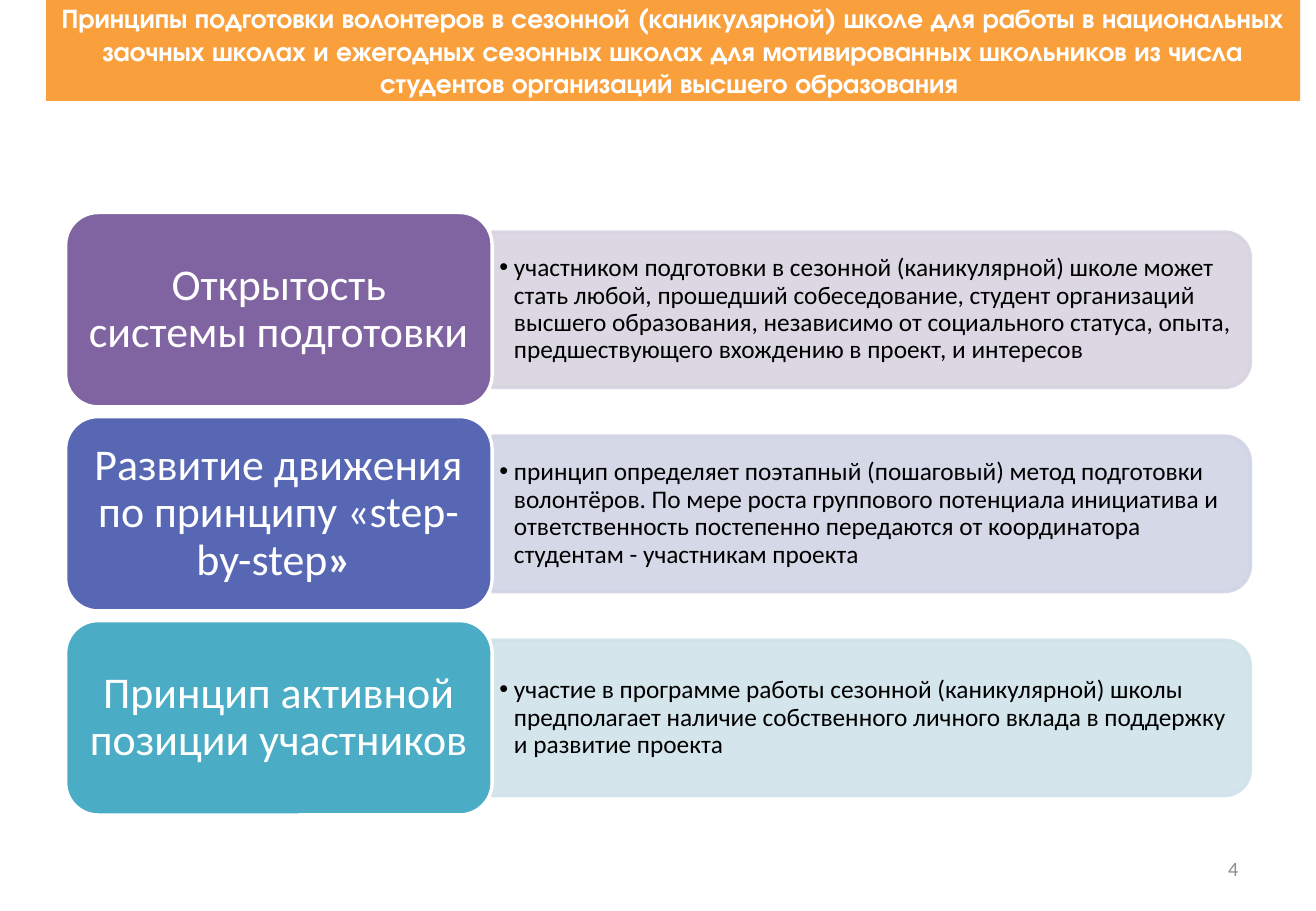
"""Builds a slide with three principles of volunteer training."""
from dataclasses import dataclass

from lxml.etree import SubElement
from pptx import Presentation
from pptx.dml.color import RGBColor
from pptx.enum.shapes import MSO_SHAPE as Shape
from pptx.enum.text import MSO_ANCHOR as Anchor, MSO_AUTO_SIZE as AutoSize, PP_ALIGN as Align
from pptx.oxml.ns import qn
from pptx.util import Inches, Pt


@dataclass(frozen=True)
class Theme:
    heading_font: str = "TeX Gyre Adventor"
    body_font: str = "Calibri"
    banner: str = "F99F3C"
    white: str = "FFFFFF"
    black: str = "000000"
    gray: str = "8C8C8C"
    title_size: int = 16
    label_size: int = 26
    list_size: int = 15
    number_size: int = 12
    outline: int = 2
    panel_alpha: int = 90


TITLE = (
    "Принципы подготовки волонтеров в сезонной (каникулярной) школе для работы в национальных "
    "заочных школах и ежегодных сезонных школах для мотивированных школьников из числа "
    "студентов организаций высшего образования "
)
PRINCIPLES = [
    ("8064A2", "D8D3E0", [("Открытость системы подготовки ", False)],
     "участником подготовки в сезонной (каникулярной) школе может стать любой, прошедший "
     "собеседование, студент организаций высшего образования, независимо от социального "
     "статуса, опыта, предшествующего вхождению в проект, и интересов"),
    ("5767B4", "D1D4E5", [("Развитие движения по принципу «step-by-step", False), ("» ", True)],
     "принцип определяет поэтапный (пошаговый) метод подготовки волонтёров. По мере роста "
     "группового потенциала инициатива и ответственность постепенно передаются от "
     "координатора студентам - участникам проекта"),
    ("4BACC6", "D0E3EA", [("Принцип активной позиции участников ", False)],
     "участие в программе работы сезонной (каникулярной) школы предполагает наличие "
     "собственного личного вклада в поддержку и развитие проекта"),
]
LABEL_LEFT, LABEL_TOP, LABEL_WIDTH, LABEL_HEIGHT = 0.54, 1.75, 3.51, 1.6
ROW_STEP = 1.68
PANEL_LENGTH, PANEL_DEPTH = 6.24, 1.28
LIST_WIDTH, LIST_HEIGHT = 6.18, 1.15


class SlideBuilder:
    """Holds the theme and the current slide."""

    def __init__(self, slide, theme):
        self.slide = slide
        self.theme = theme

    def place(self, box, left, top, width, height):
        """Move and size a box."""
        position = {"left": left, "top": top, "width": width, "height": height}
        for name, value in position.items():
            setattr(box, name, Inches(value))

    def fill_text(self, box, runs, size, color, font, align, insets=(0.1, 0.05), spacing=1.0):
        """Fill a box with one formatted paragraph."""
        frame = box.text_frame
        across, down = map(Inches, insets)
        frame_format = {
            "word_wrap": True, "auto_size": AutoSize.NONE, "vertical_anchor": Anchor.MIDDLE,
            "margin_left": across, "margin_right": across,
            "margin_top": down, "margin_bottom": down,
        }
        for name, value in frame_format.items():
            setattr(frame, name, value)
        para = frame.paragraphs[0]
        para_format = {"alignment": align, "line_spacing": spacing,
                       "space_before": Pt(0), "space_after": Pt(0)}
        for name, value in para_format.items():
            setattr(para, name, value)
        for text, bold in runs:
            span = para.add_run()
            span.text = text
            span_format = {"name": font, "size": Pt(size), "bold": bold}
            for name, value in span_format.items():
                setattr(span.font, name, value)
            span.font.color.rgb = RGBColor.from_string(color)

    def shape(self, kind, bounds, fill, line):
        """Add a filled and outlined preset shape."""
        box = self.slide.shapes.add_shape(kind, *map(Inches, bounds))
        box.shadow.inherit = False
        box.fill.solid()
        box.fill.fore_color.rgb = RGBColor.from_string(fill)
        box.line.color.rgb = RGBColor.from_string(line)
        box.line.width = Pt(self.theme.outline)
        return box

    def title(self, text):
        """Set the banner title."""
        theme, box = self.theme, self.slide.shapes.title
        self.place(box, 0.38, 0, 10.32, 0.83)
        box.fill.solid()
        box.fill.fore_color.rgb = RGBColor.from_string(theme.banner)
        self.fill_text(box, [(text, True)], theme.title_size, theme.white,
                       theme.heading_font, Align.CENTER)

    def panel(self, left, middle, color):
        """Add a translucent panel rounded on its right side."""
        bounds = (left + (PANEL_LENGTH - PANEL_DEPTH) / 2, middle - PANEL_LENGTH / 2,
                  PANEL_DEPTH, PANEL_LENGTH)
        box = self.shape(Shape.ROUND_2_SAME_RECTANGLE, bounds, color, color)
        box.rotation = 90
        for tint in box.element.spPr.iter(qn("a:srgbClr")):
            SubElement(tint, qn("a:alpha"), val=str(self.theme.panel_alpha * 1000))

    def bullet(self, box, left, middle, text):
        """Put one bulleted item into a body placeholder above the panel."""
        theme = self.theme
        box.element.getparent().append(box.element)
        self.place(box, left, middle - LIST_HEIGHT / 2, LIST_WIDTH, LIST_HEIGHT)
        properties = box.text_frame.paragraphs[0]._p.get_or_add_pPr()
        properties.set("marL", str(Inches(0.12)))
        properties.set("indent", str(Inches(-0.12)))
        SubElement(properties, qn("a:buFont"), typeface="Arial")
        SubElement(properties, qn("a:buChar"), char="•")
        self.fill_text(box, [(text, False)], theme.list_size, theme.black, theme.body_font,
                       Align.LEFT, (0.06, 0.03), 0.9)

    def label(self, top, color, runs):
        """Add a rounded label naming a principle."""
        theme = self.theme
        box = self.shape(Shape.ROUNDED_RECTANGLE,
                         (LABEL_LEFT, top, LABEL_WIDTH, LABEL_HEIGHT), color, theme.white)
        self.fill_text(box, runs, theme.label_size, theme.white, theme.body_font,
                       Align.CENTER, (0.11, 0.05), 0.9)

    def number(self, text):
        """Add the slide number."""
        theme = self.theme
        box = self.slide.shapes.add_textbox(*map(Inches, (7.76, 6.95, 2.53, 0.4)))
        self.fill_text(box, [(text, False)], theme.number_size, theme.gray,
                       theme.body_font, Align.RIGHT)


def main():
    """Build and save the deck."""
    deck = Presentation()
    deck.slide_width, deck.slide_height = Inches(10.83), Inches(7.5)
    slide = deck.slides.add_slide(deck.slide_layouts.get_by_name("Comparison"))
    builder = SlideBuilder(slide, Theme())
    builder.title(TITLE)
    bodies = [box for box in slide.placeholders if box.placeholder_format.idx > 0]
    for spare in bodies[len(PRINCIPLES):]:
        spare.element.getparent().remove(spare.element)
    panel_left = LABEL_LEFT + LABEL_WIDTH
    for row, (body, principle) in enumerate(zip(bodies, PRINCIPLES)):
        label_color, panel_color, label_runs, text = principle
        top = LABEL_TOP + row * ROW_STEP
        middle = top + LABEL_HEIGHT / 2
        builder.panel(panel_left, middle, panel_color)
        builder.bullet(body, panel_left, middle, text)
        builder.label(top, label_color, label_runs)
    builder.number("4")
    deck.save("out.pptx")


if __name__ == "__main__":
    main()
